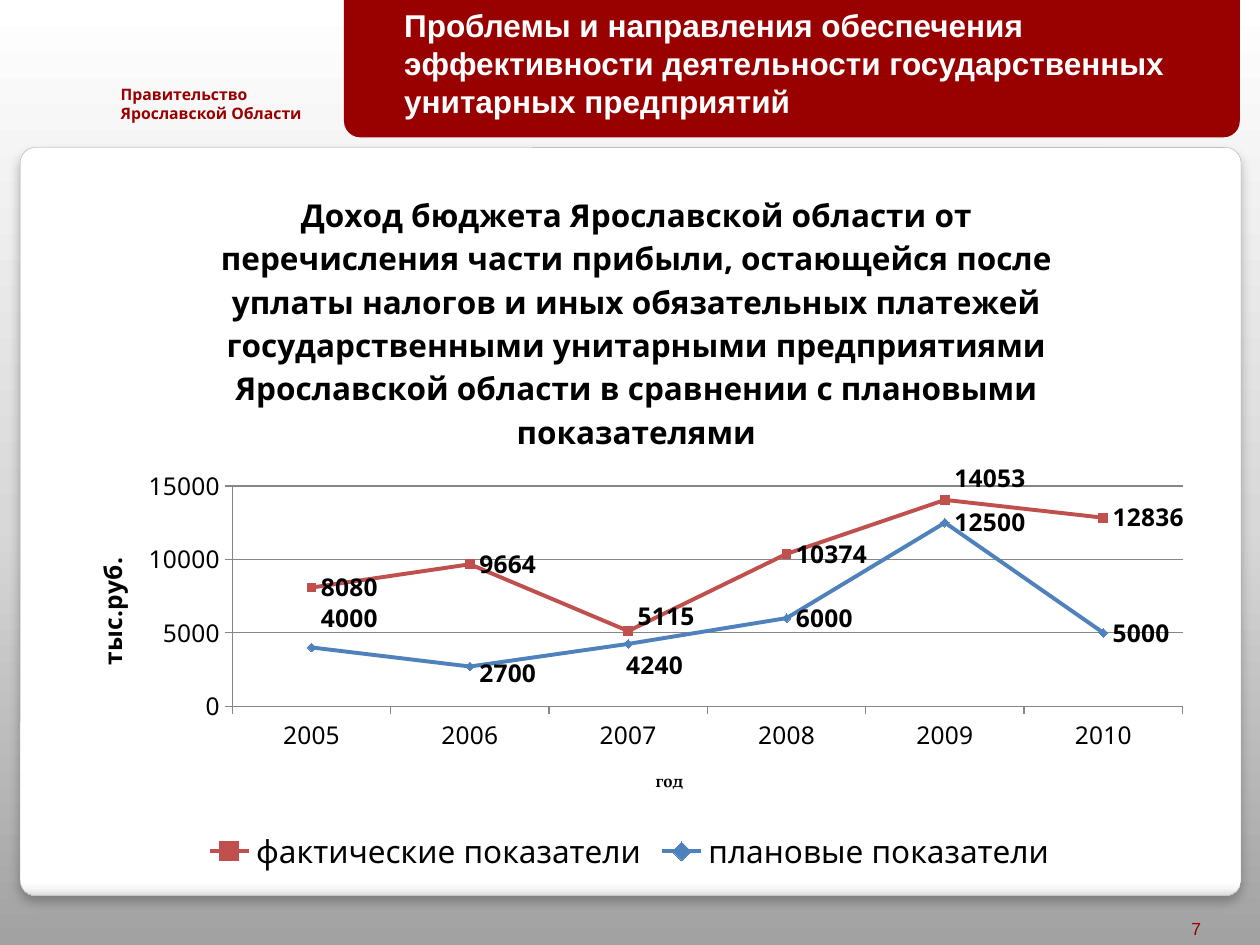
from dataclasses import dataclass, field

from lxml import etree
from pptx import Presentation
from pptx.chart.data import CategoryChartData
from pptx.dml.color import RGBColor
from pptx.enum.chart import (XL_CHART_TYPE, XL_LABEL_POSITION, XL_LEGEND_POSITION,
                             XL_MARKER_STYLE, XL_TICK_MARK)
from pptx.enum.shapes import MSO_SHAPE
from pptx.enum.text import MSO_ANCHOR, PP_ALIGN
from pptx.oxml import parse_xml
from pptx.oxml.ns import nsdecls, qn
from pptx.util import Inches, Pt

LINE_MARKERS = XL_CHART_TYPE.LINE_MARKERS
BOTTOM_LEGEND = XL_LEGEND_POSITION.BOTTOM
LABEL_RIGHT = XL_LABEL_POSITION.RIGHT
TICK_OUT, TICK_NONE = XL_TICK_MARK.OUTSIDE, XL_TICK_MARK.NONE
SQUARE, DIAMOND = XL_MARKER_STYLE.SQUARE, XL_MARKER_STYLE.DIAMOND
ROUND_RECT = MSO_SHAPE.ROUNDED_RECTANGLE
TOP, BOTTOM = MSO_ANCHOR.TOP, MSO_ANCHOR.BOTTOM
LEFT, RIGHT = PP_ALIGN.LEFT, PP_ALIGN.RIGHT

SANS, SERIF, ARIAL = "Noto Sans", "TeX Gyre Pagella", "Arial"
RED, BLACK, WHITE, GRAY = "990000", "000000", "FFFFFF", "868686"
YEARS = ["2005", "2006", "2007", "2008", "2009", "2010"]
CHART_TITLE = (
    "Доход бюджета Ярославской области от перечисления части прибыли, "
    "остающейся после уплаты налогов и иных обязательных платежей "
    "государственными унитарными предприятиями Ярославской области "
    "в сравнении с плановыми показателями"
)


@dataclass
class Indicator:
    name: str
    values: list[int]
    color: str
    marker: XL_MARKER_STYLE
    label_shifts: dict[int, tuple[float, float]] = field(default_factory=dict)


INDICATORS = [
    Indicator("фактические показатели", [8080, 9664, 5115, 10374, 14053, 12836],
              "C0504D", SQUARE, {2: (0, -0.02), 4: (0, -0.03)}),
    Indicator("плановые показатели", [4000, 2700, 4240, 6000, 12500, 5000],
              "4F81BD", DIAMOND, {0: (0, -0.04), 1: (0, 0.01), 2: (-0.01, 0.03)}),
]


def rgb(color: str) -> RGBColor:
    return RGBColor.from_string(color)


def set_font(font, size: float, name: str = SANS, color: str = BLACK, bold: bool = False) -> None:
    font.size, font.name, font.bold = Pt(size), name, bold
    font.color.rgb = rgb(color)


def set_gradient(fill, stops: list[tuple[int, str]], angle: int) -> None:
    fill.gradient()
    fill.gradient_angle = 360 - angle
    gs_list = fill.gradient_stops[0]._gs.getparent()
    for gs in list(gs_list):
        gs_list.remove(gs)
    for position, color in stops:
        gs = etree.SubElement(gs_list, qn("a:gs"), pos=str(position * 1000))
        etree.SubElement(gs, qn("a:srgbClr"), val=color)


def add_panel(s, left: float, top: float, width: float, height: float, radius: float):
    sp = s.shapes.add_shape(ROUND_RECT, Inches(left), Inches(top), Inches(width), Inches(height))
    sp.adjustments[0] = radius
    sp.shadow.inherit = False
    return sp


def add_text(s, text: str, left: float, top: float, width: float, height: float, *,
             size: float, name: str, color: str, bold: bool = False,
             align: PP_ALIGN = LEFT, anchor: MSO_ANCHOR = TOP) -> None:
    tf = s.shapes.add_textbox(Inches(left), Inches(top), Inches(width), Inches(height)).text_frame
    tf.word_wrap = True
    tf.vertical_anchor = anchor
    for i, line in enumerate(text.split("\n")):
        p = tf.add_paragraph() if i else tf.paragraphs[0]
        p.alignment = align
        r = p.add_run()
        r.text = line
        set_font(r.font, size, name, color, bold)


def layout_xml(**values):
    items = "".join(f'<c:{tag} val="{val}"/>' for tag, val in values.items())
    return parse_xml(f'<c:layout {nsdecls("c")}><c:manualLayout>{items}'
                     "</c:manualLayout></c:layout>")


def set_title(title, text: str, size: float, x: float, y: float, name: str = SANS) -> None:
    p = title.text_frame.paragraphs[0]
    r = p.add_run()
    r.text = text
    set_font(r.font, size, name, bold=True)
    element = title._element
    for old in element.findall(qn("c:layout")):
        element.remove(old)
    element.find(qn("c:tx")).addnext(layout_xml(xMode="edge", yMode="edge", x=x, y=y))


def style_axis(axis, title: str, size: float, x: float, y: float, name: str) -> None:
    set_title(axis.axis_title, title, size, x, y, name)
    set_font(axis.tick_labels.font, 14)
    axis.major_tick_mark, axis.minor_tick_mark = TICK_OUT, TICK_NONE
    axis.format.line.color.rgb = rgb(GRAY)


def style_series(series, indicator: Indicator) -> None:
    series.smooth = False
    series.format.line.color.rgb = rgb(indicator.color)
    series.format.line.width = Pt(2.25)
    marker = series.marker
    marker.style, marker.size = indicator.marker, 5
    marker.format.fill.solid()
    marker.format.fill.fore_color.rgb = rgb(indicator.color)
    marker.format.line.color.rgb = rgb(indicator.color)
    labels = series.data_labels
    labels.show_value, labels.position = True, LABEL_RIGHT
    set_font(labels.font, 14, bold=True)
    for index, (x, y) in indicator.label_shifts.items():
        label = series.points[index].data_label
        set_font(label.font, 14, bold=True)
        label.position = LABEL_RIGHT
        element = labels._element.xpath(f"c:dLbl[c:idx/@val='{index}']")[0]
        element.insert(1, layout_xml(x=x, y=y))


def add_income_chart(s) -> None:
    data = CategoryChartData()
    data.categories = YEARS
    for indicator in INDICATORS:
        data.add_series(indicator.name, indicator.values)
    chart = s.shapes.add_chart(LINE_MARKERS, Inches(0.43), Inches(1.23),
                               Inches(9.13), Inches(5.75), data).chart
    set_font(chart.font, 10, SERIF)
    set_title(chart.chart_title, CHART_TITLE, 18, 0.14, 0.04)
    chart.has_legend = True
    chart.legend.position = BOTTOM_LEGEND
    chart.legend.include_in_layout = False
    set_font(chart.legend.font, 18)
    style_axis(chart.category_axis, "год", 10, 0.52, 0.85, SERIF)
    style_axis(chart.value_axis, "тыс.руб.", 14, 0.03, 0.55, SANS)
    axis = chart.value_axis
    axis.minimum_scale, axis.maximum_scale, axis.major_unit = 0, 15000, 5000
    axis.major_gridlines.format.line.color.rgb = rgb(GRAY)
    plot = chart.plots[0]
    plot.vary_by_categories = False
    for series, indicator in zip(plot.series, INDICATORS):
        style_series(series, indicator)
    area = chart._chartSpace.chart.plotArea
    for old in area.findall(qn("c:layout")):
        area.remove(old)
    area.insert(0, layout_xml(layoutTarget="inner", xMode="edge", yMode="edge",
                              x=0.155, y=0.457, w=0.826, h=0.304))


def main() -> None:
    prs = Presentation()
    prs.slide_width, prs.slide_height = Inches(10), Inches(7.5)
    s = prs.slides.add_slide(prs.slide_layouts[6])
    set_gradient(s.background.fill, [(0, "A2A2A2"), (45, "D8D8D8"), (100, WHITE)], 270)

    card = add_panel(s, 0.16, 1.17, 9.69, 5.94, 0.021)
    set_gradient(card.fill, [(0, WHITE), (98, WHITE), (99, "F7F7F7"), (100, "DADADA")], 90)
    card.line.color.rgb = rgb("A4A4A4")
    card.line.width = Pt(0.16)
    effects = card._element.spPr.find(qn("a:effectLst"))
    shadow = etree.SubElement(effects, qn("a:outerShdw"), blurRad=str(Pt(6)), dist=str(Pt(4)),
                              dir="5400000", algn="t", rotWithShape="0")
    shade = etree.SubElement(shadow, qn("a:srgbClr"), val=BLACK)
    etree.SubElement(shade, qn("a:alpha"), val="25000")

    add_text(s, "Правительство\nЯрославской Области", 0.86, 0.62, 1.88, 0.4,
             size=9, name=SANS, color=RED, bold=True)
    banner = add_panel(s, 2.73, -0.16, 7.11, 1.25, 0.104)
    banner.fill.solid()
    banner.fill.fore_color.rgb = rgb(RED)
    banner.line.fill.background()
    add_text(s, "7", 9.13, 7.1, 0.5, 0.4, size=10, name=ARIAL, color=RED,
             align=RIGHT, anchor=BOTTOM)
    add_text(s, "Проблемы и направления обеспечения эффективности деятельности "
             "государственных унитарных предприятий", 3.11, 0, 6.54, 1.01,
             size=18, name=ARIAL, color=WHITE, bold=True)
    add_income_chart(s)
    prs.save("out.pptx")


if __name__ == "__main__":
    main()
